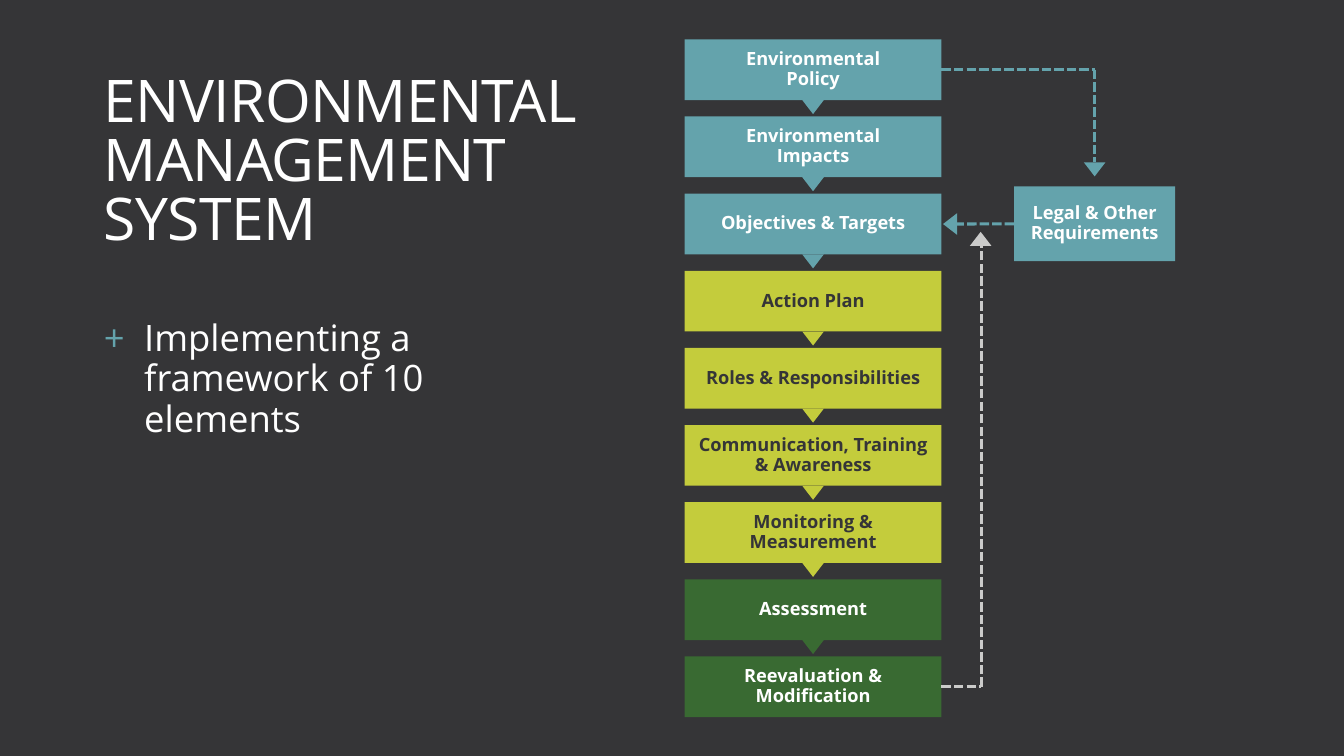
from dataclasses import dataclass

from lxml.etree import SubElement
from pptx import Presentation
from pptx.dml.color import RGBColor
from pptx.enum.dml import MSO_LINE
from pptx.enum.shapes import MSO_CONNECTOR, MSO_SHAPE
from pptx.enum.text import MSO_ANCHOR, MSO_AUTO_SIZE, PP_ALIGN
from pptx.oxml.ns import qn
from pptx.util import Pt

FONT = "Open Sans"
DARK, WHITE, GREY = "353537", "FFFFFF", "CBCBCA"
TEAL, LIME, GREEN = "64A3AC", "C4CC3C", "396A32"

# Lengths in points
STEP_LEFT, STEP_TOP = 489, 28.1
STEP_WIDTH, STEP_HEIGHT, STEP_PITCH = 183.5, 43.4, 55.1
HEAD_WIDTH, HEAD_HEIGHT = 15.4, 10
STEP_RIGHT = STEP_LEFT + STEP_WIDTH
STEP_CENTRE = STEP_LEFT + STEP_WIDTH / 2
LEGAL_LEFT, LEGAL_TOP, LEGAL_WIDTH, LEGAL_HEIGHT = 724.4, 133.2, 115, 53.4
LEGAL_CENTRE = LEGAL_LEFT + LEGAL_WIDTH / 2
FEEDBACK_X = 701


@dataclass
class Step:
    label: str
    fill: str
    text_color: str = WHITE


@dataclass
class Head:
    """Arrowhead placed by its centre."""
    x: float
    y: float
    color: str
    rotation: int


@dataclass
class Route:
    """Dashed line; origin is the box whose side it leaves from."""
    start: tuple
    end: tuple
    color: str
    origin: object = None
    side: int = 3


STEPS = [
    Step("Environmental\nPolicy", TEAL),
    Step("Environmental\nImpacts", TEAL),
    Step("Objectives & Targets", TEAL),
    Step("Action Plan", LIME, DARK),
    Step("Roles & Responsibilities", LIME, DARK),
    Step("Communication, Training\n& Awareness", LIME, DARK),
    Step("Monitoring & Measurement", LIME, DARK),
    Step("Assessment", GREEN),
    Step("Reevaluation & Modification", GREEN),
]


def rgb(value: str) -> RGBColor:
    return RGBColor.from_string(value)


def write(paragraph, text: str, size: float, color: str, bold: bool = False) -> list:
    runs = []
    for index, line in enumerate(text.split("\n")):
        if index:
            paragraph.add_line_break()
        run = paragraph.add_run()
        run.text = line
        run.font.name, run.font.size, run.font.bold = FONT, Pt(size), bold
        run.font.color.rgb = rgb(color)
        runs.append(run)
    return runs


def add_solid(slide, kind, left: float, top: float, width: float, height: float, color: str):
    shape = slide.shapes.add_shape(kind, Pt(left), Pt(top), Pt(width), Pt(height))
    shape.shadow.inherit = False
    shape.fill.solid()
    shape.fill.fore_color.rgb = rgb(color)
    shape.line.fill.background()
    return shape


def add_box(slide, step: Step, left: float, top: float, width: float, height: float):
    box = add_solid(slide, MSO_SHAPE.RECTANGLE, left, top, width, height, step.fill)
    frame = box.text_frame
    frame.word_wrap = True
    frame.vertical_anchor = MSO_ANCHOR.MIDDLE
    paragraph = frame.paragraphs[0]
    paragraph.alignment = PP_ALIGN.CENTER
    paragraph.line_spacing = 0.9
    write(paragraph, step.label, 13, step.text_color, bold=True)
    return box


def add_head(slide, head: Head) -> None:
    triangle = add_solid(slide, MSO_SHAPE.ISOSCELES_TRIANGLE, head.x - HEAD_WIDTH / 2,
                         head.y - HEAD_HEIGHT / 2, HEAD_WIDTH, HEAD_HEIGHT, head.color)
    triangle.rotation = head.rotation


def add_route(slide, route: Route) -> None:
    line = slide.shapes.add_connector(
        MSO_CONNECTOR.STRAIGHT, *(Pt(value) for value in route.start + route.end))
    if route.origin is not None:
        line.begin_connect(route.origin, route.side)
    line.line.color.rgb = rgb(route.color)
    line.line.width = Pt(2.25)
    line.line.dash_style = MSO_LINE.SQUARE_DOT
    SubElement(line._element.spPr, qn("a:effectLst"))


def place(placeholder, left: float, top: float, width: float, height: float):
    placeholder.left, placeholder.top = Pt(left), Pt(top)
    placeholder.width, placeholder.height = Pt(width), Pt(height)
    frame = placeholder.text_frame
    frame.word_wrap = True
    frame.auto_size = MSO_AUTO_SIZE.NONE
    frame.vertical_anchor = MSO_ANCHOR.TOP
    frame.paragraphs[0].alignment = PP_ALIGN.LEFT
    frame.paragraphs[0].space_before = Pt(0)
    return frame


def add_heading(slide) -> None:
    paragraph = place(slide.shapes.title, 67, 49.7, 392.4, 163.4).paragraphs[0]
    paragraph.line_spacing = 0.84
    for run in write(paragraph, "ENVIRONMENTAL\nMANAGEMENT SYSTEM", 42, WHITE):
        run._r.get_or_add_rPr().set("spc", "-50")


def add_summary(slide) -> None:
    frame = place(slide.placeholders[1], 67, 221, 359.3, 246.2)
    frame.margin_top, frame.margin_right = Pt(6.8), Pt(12)
    paragraph = frame.paragraphs[0]
    paragraph.line_spacing = 0.93
    properties = paragraph._p.get_or_add_pPr()
    properties.set("marL", str(Pt(28.8)))
    properties.set("indent", str(Pt(-28.8)))
    bullet_color = SubElement(properties, qn("a:buClr"))
    SubElement(bullet_color, qn("a:srgbClr"), val=TEAL)
    SubElement(properties, qn("a:buFont"), typeface=FONT)
    SubElement(properties, qn("a:buChar"), char="+")
    write(paragraph, "Implementing a framework of 10 elements", 26, WHITE)


def add_flow(slide) -> None:
    # Column of steps, each pointing to the next
    boxes, middles = [], []
    for index, step in enumerate(STEPS):
        top = STEP_TOP + index * STEP_PITCH
        boxes.append(add_box(slide, step, STEP_LEFT, top, STEP_WIDTH, STEP_HEIGHT))
        middles.append(top + STEP_HEIGHT / 2)
        if index < len(STEPS) - 1:
            add_head(slide, Head(STEP_CENTRE, top + STEP_HEIGHT + HEAD_HEIGHT / 2, step.fill, 180))
    policy_y, objectives_y, modification_y = middles[0], middles[2], middles[-1]

    # Side box for legal requirements
    legal = add_box(slide, Step("Legal & Other Requirements", TEAL),
                    LEGAL_LEFT, LEGAL_TOP, LEGAL_WIDTH, LEGAL_HEIGHT)
    legal.text_frame.margin_top = legal.text_frame.margin_bottom = Pt(0)

    # Dashed routes between the column and the side box
    for route in (
        Route((STEP_RIGHT, policy_y), (LEGAL_CENTRE, policy_y), TEAL, boxes[0]),
        Route((LEGAL_CENTRE, policy_y), (LEGAL_CENTRE, 116), TEAL),
        Route((LEGAL_LEFT, objectives_y), (683.3, objectives_y), TEAL, legal, 1),
        Route((STEP_RIGHT, modification_y), (FEEDBACK_X, modification_y), GREY, boxes[-1]),
        Route((FEEDBACK_X, modification_y), (FEEDBACK_X, 175.5), GREY),
    ):
        add_route(slide, route)
    for head in (
        Head(LEGAL_CENTRE, 121, TEAL, 180),
        Head(678.6, objectives_y, TEAL, 270),
        Head(FEEDBACK_X - 0.5, 170.6, GREY, 0),
    ):
        add_head(slide, head)


def main() -> None:
    deck = Presentation()
    deck.slide_width, deck.slide_height = Pt(960), Pt(540)
    slide = deck.slides.add_slide(deck.slide_layouts[1])
    slide.background.fill.solid()
    slide.background.fill.fore_color.rgb = rgb(DARK)
    add_flow(slide)
    add_heading(slide)
    add_summary(slide)
    deck.save("out.pptx")


if __name__ == "__main__":
    main()
